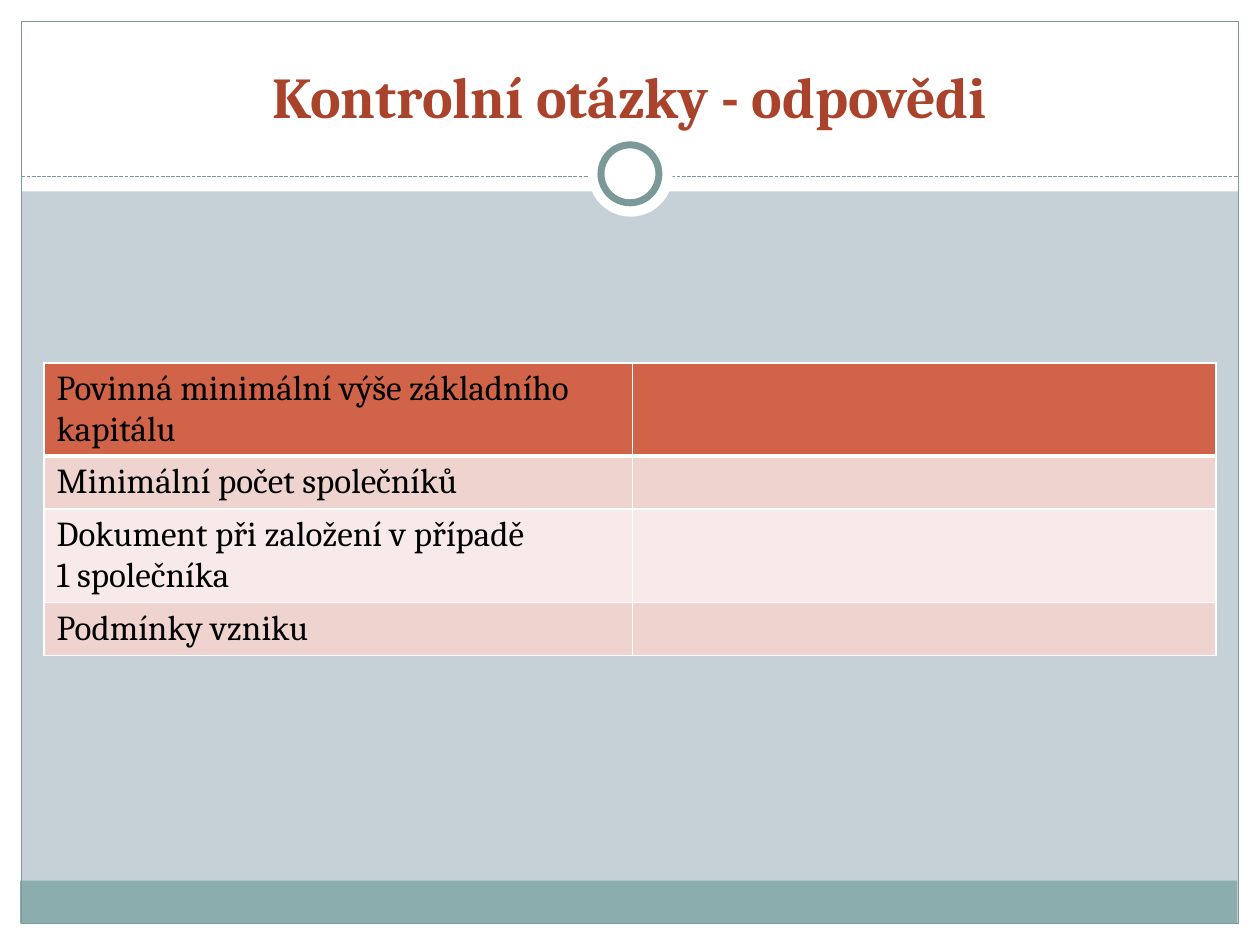
from lxml import etree
from pptx import Presentation
from pptx.dml.color import RGBColor
from pptx.enum import dml, shapes, text
from pptx.oxml import ns
from pptx.util import Inches, Pt

WHITE = RGBColor(0xFF, 0xFF, 0xFF)
BLACK = RGBColor(0, 0, 0)
MIST = RGBColor(0xC5, 0xD1, 0xD7)
TEAL = RGBColor(0x8C, 0xAD, 0xAE)
SLATE = RGBColor(0x7C, 0x99, 0x9A)
RUST = RGBColor(0xA9, 0x43, 0x2B)
BRICK = RGBColor(0xD1, 0x63, 0x49)
ROSE = RGBColor(0xEE, 0xD3, 0xCF)
BLUSH = RGBColor(0xF7, 0xEA, 0xE9)

RECT = shapes.MSO_SHAPE.RECTANGLE
OVAL = shapes.MSO_SHAPE.OVAL
FONT = "Cambria"
COLS = (4.67, 4.63)
ROWS = (
    ("Povinná minimální výše základního kapitálu", 0.73, BRICK),
    ("Minimální počet společníků", 0.42, ROSE),
    ("Dokument při založení v případě\n1 společníka", 0.74, BLUSH),
    ("Podmínky vzniku", 0.42, ROSE),
)


def add_shape(slide, kind, box, fill=None, line=None, width=0.75):
    shape = slide.shapes.add_shape(kind, *map(Inches, box))
    shape.shadow.inherit = False
    if fill is None:
        shape.fill.background()
    else:
        shape.fill.solid()
        shape.fill.fore_color.rgb = fill
    if line is None:
        shape.line.fill.background()
    else:
        shape.line.color.rgb = line
        shape.line.width = Pt(width)


def add_rule(slide, left, right, top):
    rule = slide.shapes.add_connector(
        shapes.MSO_CONNECTOR.STRAIGHT,
        Inches(left), Inches(top), Inches(right), Inches(top))
    rule.line.color.rgb = SLATE
    rule.line.width = Pt(0.75)
    rule.line.dash_style = dml.MSO_LINE.SQUARE_DOT
    etree.SubElement(rule._element.spPr, ns.qn("a:effectLst"))


def style(frame, size, color, bold=False):
    for para in frame.paragraphs:
        font = para.font
        font.name, font.size, font.bold = FONT, Pt(size), bold
        font.color.rgb = color


def add_frame(slide):
    for box in ((0, 7.33, 10, 0.17), (0, 0, 10, 1.52),
                (0, 0, 0.17, 7.5), (9.83, 0, 0.17, 7.5)):
        add_shape(slide, RECT, box, WHITE)
    add_shape(slide, RECT, (0.16, 6.99, 9.66, 0.34), TEAL)
    add_shape(slide, RECT, (0.17, 0.17, 9.66, 7.16), line=SLATE)
    add_rule(slide, 0.17, 9.83, 1.4)
    add_shape(slide, OVAL, (4.67, 1.05, 0.67, 0.67), WHITE)
    add_shape(slide, OVAL, (4.77, 1.15, 0.46, 0.46), WHITE, SLATE, 4)


def set_title(slide, words):
    title = slide.shapes.title
    title.left, title.top = Inches(0.33), Inches(0.25)
    title.width, title.height = Inches(9.33), Inches(0.83)
    frame = title.text_frame
    frame.text = words
    frame.auto_size = text.MSO_AUTO_SIZE.NONE
    frame.vertical_anchor = text.MSO_ANCHOR.BOTTOM
    frame.paragraphs[0].alignment = text.PP_ALIGN.CENTER
    style(frame, 33, RUST, True)
    slide.shapes._spTree.append(title._element)


def set_edges(cell, top, bottom):
    props = cell._tc.get_or_add_tcPr()
    for side, width in (("L", 1), ("R", 1), ("T", top), ("B", bottom)):
        edge = etree.SubElement(props, ns.qn(f"a:ln{side}"), w=str(Pt(width)))
        fill = etree.SubElement(edge, ns.qn("a:solidFill"))
        etree.SubElement(fill, ns.qn("a:srgbClr"), val=str(WHITE))


def add_table(slide):
    high = sum(row[1] for row in ROWS)
    table = slide.shapes.add_table(
        len(ROWS), len(COLS), Inches(0.35), Inches(2.88),
        Inches(sum(COLS)), Inches(high)).table
    table.first_row = table.horz_banding = False
    for col, width in zip(table.columns, COLS):
        col.width = Inches(width)
    for i, (words, height, fill) in enumerate(ROWS):
        table.rows[i].height = Inches(height)
        for cell in table.rows[i].cells:
            set_edges(cell, 3 if i == 1 else 1, 3 if i == 0 else 1)
            cell.fill.solid()
            cell.fill.fore_color.rgb = fill
        frame = table.cell(i, 0).text_frame
        frame.text = words
        style(frame, 20, BLACK)


def main():
    deck = Presentation()
    deck.slide_width, deck.slide_height = Inches(10), Inches(7.5)
    slide = deck.slides.add_slide(deck.slide_layouts[5])
    slide.background.fill.solid()
    slide.background.fill.fore_color.rgb = MIST
    add_frame(slide)
    set_title(slide, "Kontrolní otázky - odpovědi")
    add_table(slide)
    deck.save("out.pptx")


if __name__ == "__main__":
    main()
